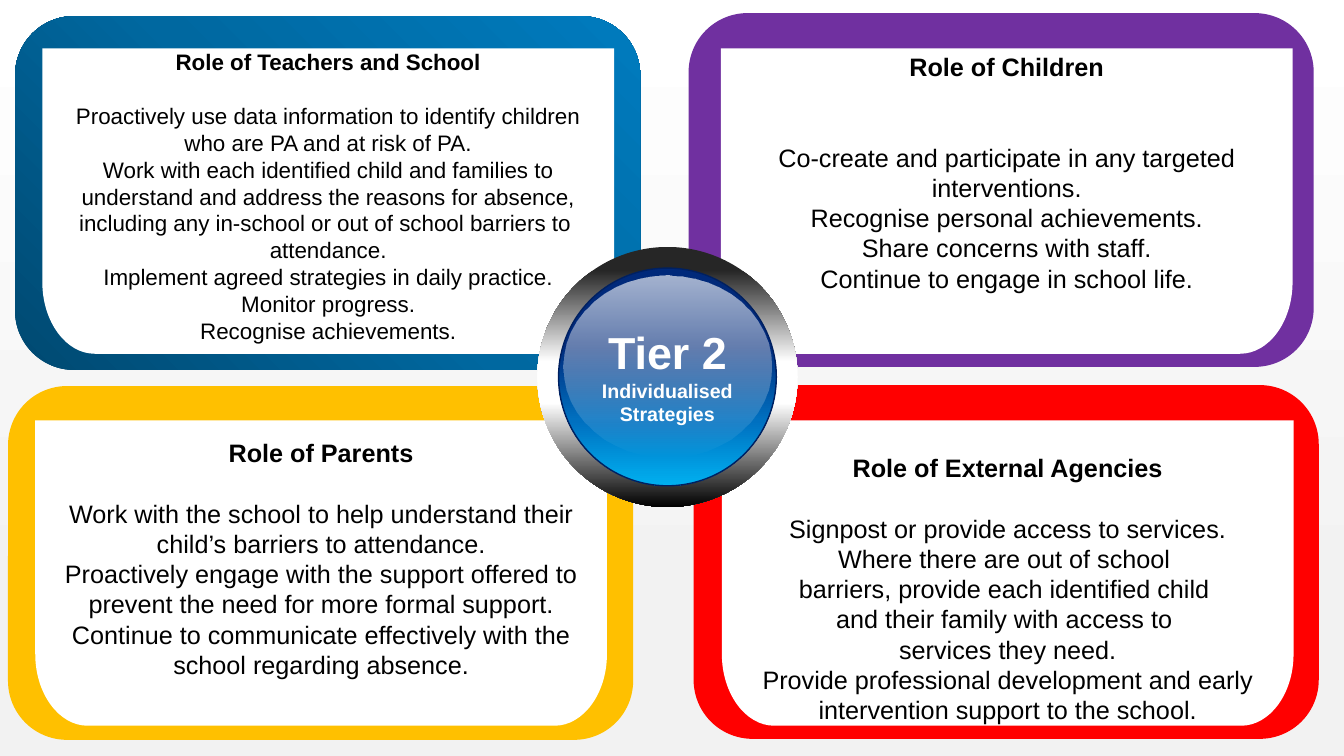
from dataclasses import dataclass

from lxml import etree
from pptx import Presentation
from pptx.dml.color import RGBColor
from pptx.enum.shapes import MSO_SHAPE
from pptx.enum.text import MSO_ANCHOR, PP_ALIGN
from pptx.oxml.ns import qn
from pptx.util import Pt

EMU_PER_PX = 9144
ROUNDED, ELLIPSE = MSO_SHAPE.ROUNDED_RECTANGLE, MSO_SHAPE.OVAL
CENTER, TOP, MIDDLE = PP_ALIGN.CENTER, MSO_ANCHOR.TOP, MSO_ANCHOR.MIDDLE
SLIDE_SIZE = (1333, 750)
FRAME_SIZE = (620, 351)
PANEL_SIZE = (567, 303)
PANEL_CORNER = (52, 71)
CURVE_PULL = 0.55


@dataclass(frozen=True)
class Theme:
    """Colours, gradients and type of the slide."""
    font: str = "Arial"
    ink: str = "000000"
    paper: str = "FFFFFF"
    rim_line: str = "002060"
    small: int = 16
    body: int = 18
    hub_title: int = 32
    hub_label: int = 14
    line_ratio: float = 1.2
    backdrop: tuple = ((0, "FFFFFF", 100), (81, "F2F2F2", 100), (100, "F2F2F2", 100))
    teachers: tuple = ((0, "004971", 100), (50, "0068A0", 100), (100, "007BBE", 100))
    children: str = "7030A0"
    parents: str = "FFC000"
    agencies: str = "FF0000"
    metal: tuple = ((9, "262626", 100), (44, "FFFFFF", 100),
                    (60, "FFFFFF", 100), (100, "000000", 100))
    glass: tuple = ((35, "00297A", 100), (70, "0070C0", 100), (100, "00B0F0", 100))
    gloss: tuple = ((0, "FFFFFF", 65), (100, "FFFFFF", 0))


THEME = Theme()


@dataclass(frozen=True)
class Role:
    """One quadrant: its place, look and wording."""
    at: tuple
    panel_offset: tuple
    fill: object
    size: int
    text_top: int
    gap_lines: int
    title: str
    points: tuple


ROLES = (
    Role((15, 16), (27, 32), THEME.teachers, THEME.small, 0, 1,
         "Role of Teachers and School",
         ("Proactively use data information to identify children who are PA and at risk of PA.",
          "Work with each identified child and families to understand and address the reasons "
          "for absence, including any in-school or out of school barriers to ",
          "attendance.",
          "Implement agreed strategies in daily practice.",
          "Monitor progress.",
          "Recognise achievements.")),
    Role((8, 383), (27, 34), THEME.parents, THEME.body, 17, 1,
         "Role of Parents",
         ("Work with the school to help understand their child’s barriers to attendance.",
          "Proactively engage with the support offered to prevent the need for more formal support.",
          "Continue to communicate effectively with the school regarding absence.")),
    Role((683, 13), (32, 35), THEME.children, THEME.body, 3, 2,
         "Role of Children",
         ("Co-create and participate in any targeted interventions.",
          "Recognise personal achievements.",
          "Share concerns with staff.",
          "Continue to engage in school life.")),
    Role((688, 382), (28, 35), THEME.agencies, THEME.body, 32, 1,
         "Role of External Agencies",
         ("Signpost or provide access to services.",
          "Where there are out of school ",
          "barriers, provide each identified child ",
          "and their family with access to ",
          "services they need.",
          "Provide professional development and early intervention support to the school.")),
)


def px(*lengths):
    """Turn px lengths into EMU."""
    return [round(length * EMU_PER_PX) for length in lengths]


def paint_gradient(fill, owner, stops, angle):
    """Fill with a linear gradient of (position, colour, opacity) stops."""
    fill.gradient()
    gradient = owner.find(".//" + qn("a:gradFill"))
    for child in list(gradient):
        gradient.remove(child)
    stop_list = etree.SubElement(gradient, qn("a:gsLst"))
    for position, color, opacity in stops:
        stop = etree.SubElement(stop_list, qn("a:gs"), pos=str(position * 1000))
        tint = etree.SubElement(stop, qn("a:srgbClr"), val=color)
        if opacity < 100:
            etree.SubElement(tint, qn("a:alpha"), val=str(opacity * 1000))
    etree.SubElement(gradient, qn("a:lin"), ang=str(angle * 60000), scaled="0")


def style_shape(shape, fill, angle=90):
    """Give a shape a flat or gradient fill, no line and no shadow."""
    shape.shadow.inherit = False
    shape.line.fill.background()
    if isinstance(fill, str):
        shape.fill.solid()
        shape.fill.fore_color.rgb = RGBColor.from_string(fill)
    else:
        paint_gradient(shape.fill, shape.element, fill, angle)


def prepare_frame(frame, anchor, side, top):
    """Set wrapping, anchor and px insets of a text frame."""
    frame.word_wrap = True
    frame.vertical_anchor = anchor
    frame.margin_left = frame.margin_right = side * EMU_PER_PX
    frame.margin_top = top * EMU_PER_PX
    frame.margin_bottom = 0


def write_lines(frame, lines):
    """Write centred (text, size, bold, colour, space before) lines."""
    for index, (text, size, bold, color, before) in enumerate(lines):
        para = frame.add_paragraph() if index else frame.paragraphs[0]
        para.alignment = CENTER
        para.space_before = Pt(before)
        span = para.add_run()
        span.text = text
        span.font.name = THEME.font
        span.font.size = Pt(size)
        span.font.bold = bold
        span.font.color.rgb = RGBColor.from_string(color)


def bend_line(segment, controls):
    """Turn a straight outline segment into a curve with px control points."""
    curve = etree.Element(qn("a:cubicBezTo"))
    for control in controls:
        x, y = px(*control)
        etree.SubElement(curve, qn("a:pt"), x=str(x), y=str(y))
    curve.append(segment[0])
    segment.getparent().replace(segment, curve)


def add_panel(shapes, box):
    """Draw a panel with square top and rounded bottom corners."""
    left, top, width, height = box
    radius_x, radius_y = PANEL_CORNER
    outline = ((width, 0), (width, height - radius_y), (width - radius_x, height),
               (radius_x, height), (0, height - radius_y))
    builder = shapes.build_freeform(*px(left, top), scale=1.0)
    builder.add_line_segments([px(left + x, top + y) for x, y in outline], close=True)
    panel = builder.convert_to_shape()
    segments = list(panel.element.iter(qn("a:lnTo")))
    near_x, near_y = radius_x * (1 - CURVE_PULL), height - radius_y * (1 - CURVE_PULL)
    bend_line(segments[2], ((width, near_y), (width - near_x, height)))
    bend_line(segments[4], ((near_x, height), (0, near_y)))
    style_shape(panel, THEME.paper)
    return panel


def add_role(shapes, role, box):
    """Draw one role quadrant in its box."""
    style_shape(shapes.add_shape(ROUNDED, *px(*box)), role.fill, 315)
    left, top = box[0] + role.panel_offset[0], box[1] + role.panel_offset[1]
    frame = add_panel(shapes, (left, top, *PANEL_SIZE)).text_frame
    prepare_frame(frame, TOP, 20, role.text_top)
    gap = round(role.gap_lines * role.size * THEME.line_ratio, 1)
    lines = [(role.title, role.size, True, THEME.ink, 0)]
    for index, point in enumerate(role.points):
        lines.append((point, role.size, False, THEME.ink, 0 if index else gap))
    write_lines(frame, lines)


def add_hub(shapes, box):
    """Draw the round tier badge in its box."""
    left, top, width, height = box
    hub = shapes.add_group_shape().shapes
    rim = hub.add_shape(ELLIPSE, *px(*box))
    style_shape(rim, THEME.metal)
    disc = hub.add_shape(ELLIPSE, *px(left + 21, top + 21, width - 42, height - 42))
    style_shape(disc, THEME.glass)
    disc.line.color.rgb = RGBColor.from_string(THEME.rim_line)
    disc.line.width = Pt(1)
    shine = hub.add_shape(ELLIPSE, *px(left + 26, top + 28, width - 52, height - 77))
    style_shape(shine, THEME.gloss)
    label = hub.add_textbox(*px(left + 44, top + 72, 170, 111))
    prepare_frame(label.text_frame, MIDDLE, 10, 0)
    write_lines(label.text_frame, (
        ("Tier 2", THEME.hub_title, True, THEME.paper, 0),
        ("Individualised Strategies", THEME.hub_label, True, THEME.paper, 0)))


def main():
    """Build and save the deck."""
    deck = Presentation()
    deck.slide_width, deck.slide_height = px(*SLIDE_SIZE)
    page = deck.slides.add_slide(deck.slide_layouts[6])
    paint_gradient(page.background.fill, page.element, THEME.backdrop, 90)
    for role in ROLES:
        add_role(page.shapes, role, (*role.at, *FRAME_SIZE))
    add_hub(page.shapes, (533, 245, 258, 258))
    deck.save("out.pptx")


if __name__ == "__main__":
    main()
